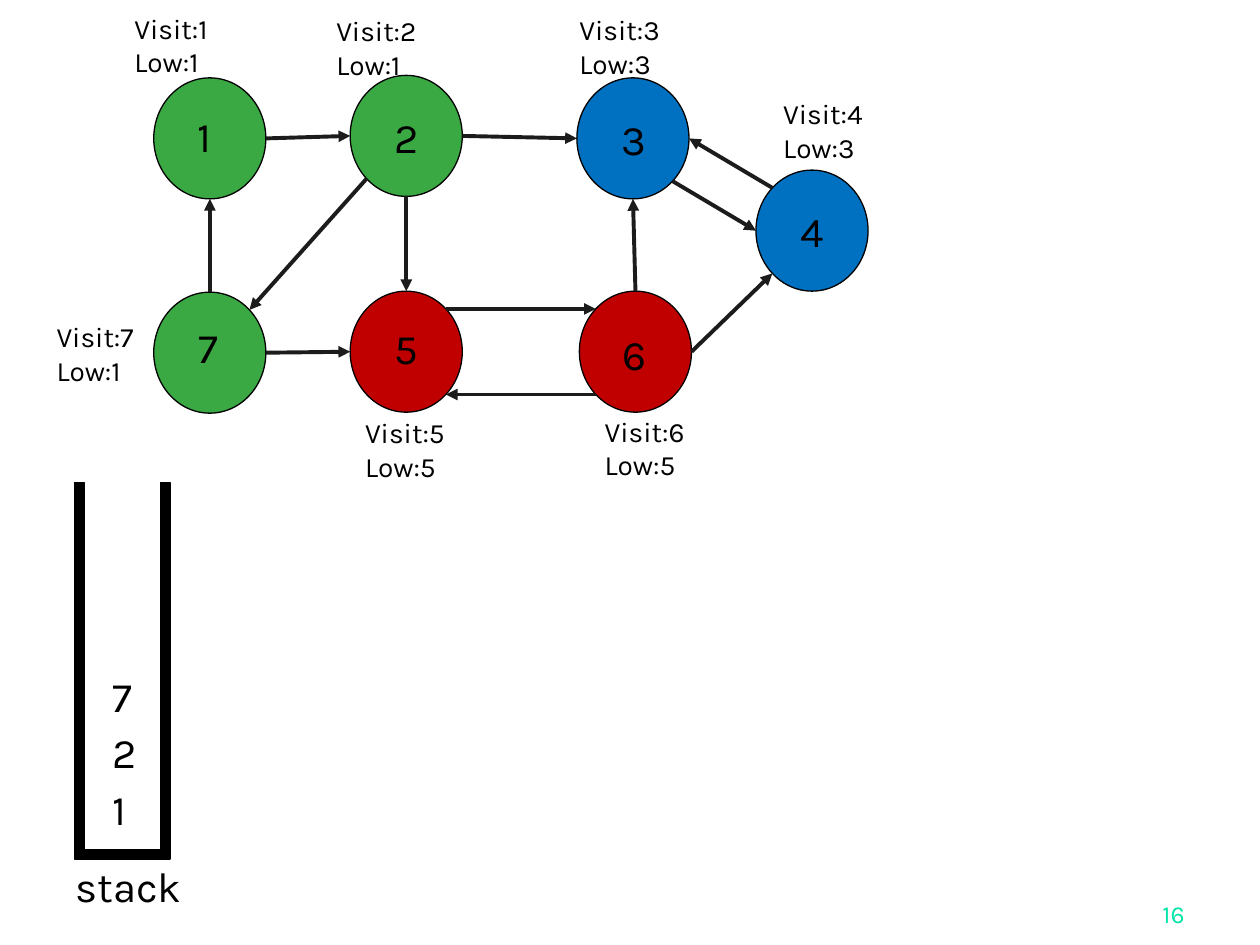
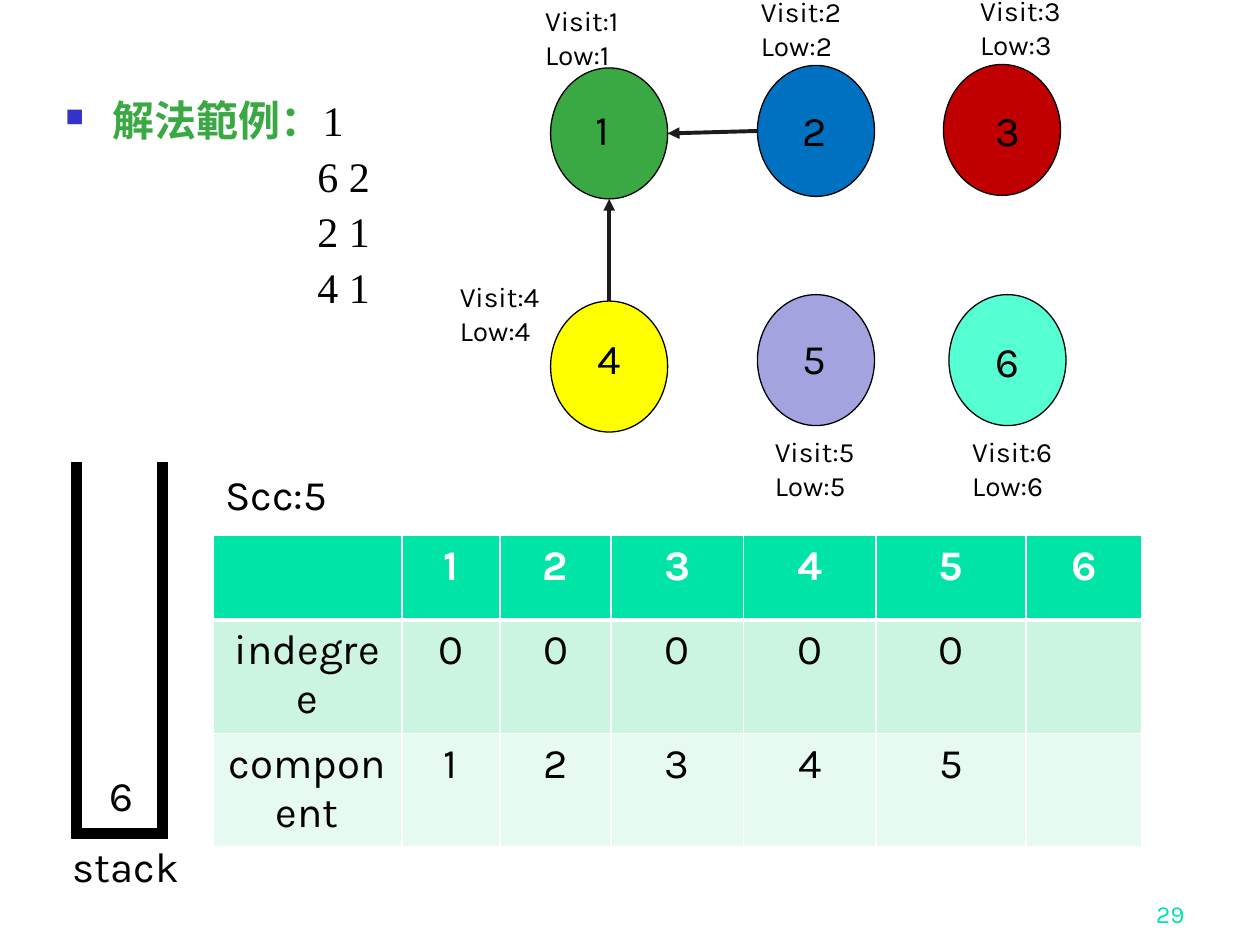
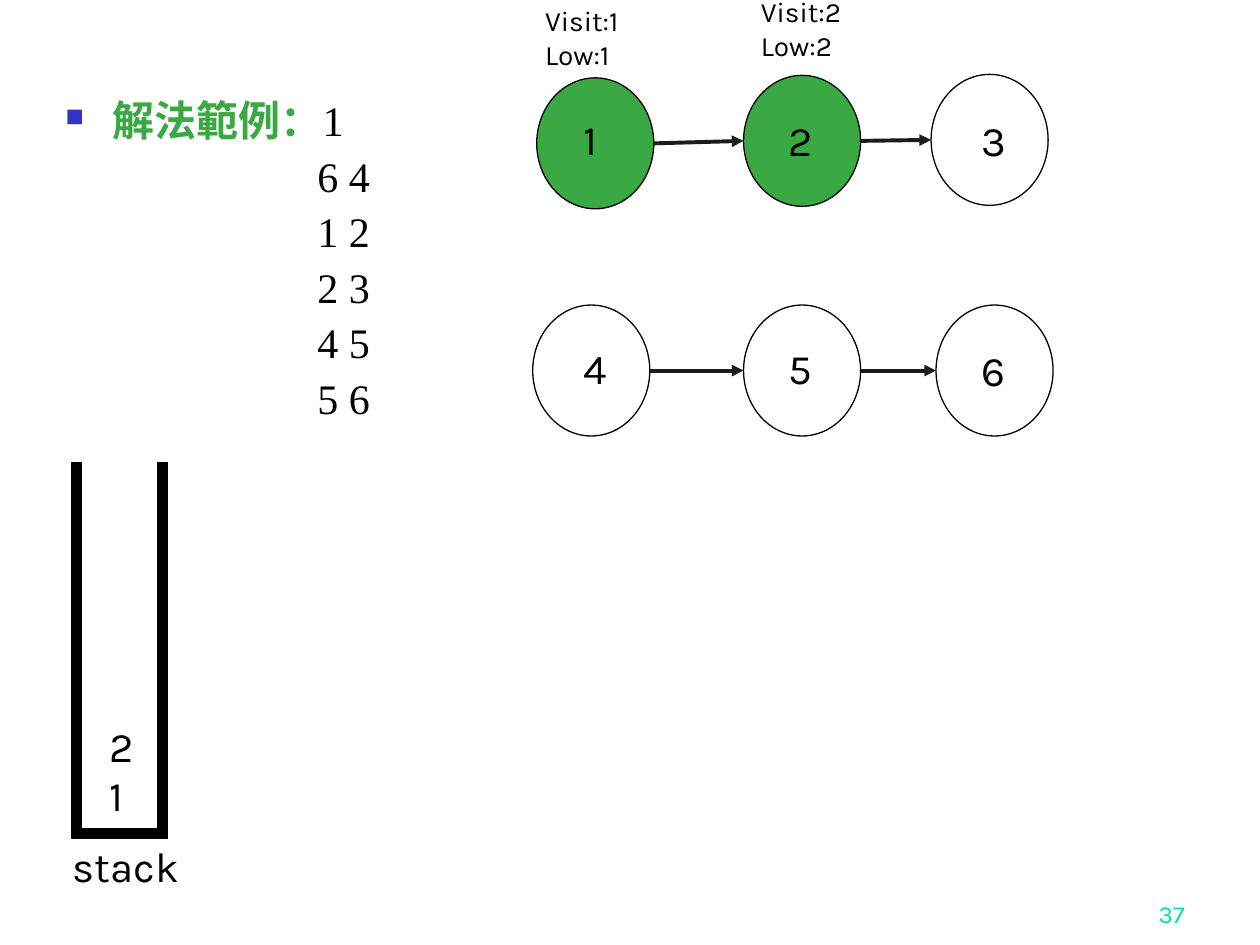
from lxml import etree
from pptx import Presentation
from pptx.dml.color import RGBColor
from pptx.enum.shapes import MSO_CONNECTOR as LINK, MSO_SHAPE as SHAPE
from pptx.enum.text import MSO_ANCHOR as ANCHOR, PP_ALIGN as ALIGN
from pptx.oxml.ns import qn
from pptx.util import Cm, Pt

BLACK, WHITE, ARROW = "000000", "FFFFFF", "1C1C1C"
GREEN, BLUE, RED = "3BA943", "0070C0", "C00000"
YELLOW, LILAC, MINT = "FFFF00", "A3A3E0", "56FFD2"
ACCENT, BULLET = "00E4A8", "3333CC"
ROW_FILLS = [ACCENT, "CCF5E1", "E7FAF1"]
SANS, SERIF = "Karla", "Times New Roman"

# Content; all places in cm.
# nodes: number -> (place, colour, place of the digit)
# marks: number -> (place, visit, low)
# edges: (from node, side, to node, side), sides as compass points
# stack: (place, items from the bottom up, top of the lowest item, step)
SLIDES = [
    {
        "page": 16,
        "node_size": (2.26, 2.44),
        "nodes": {
            3: ((11.63, 1.57), BLUE, (12.27, 2.16)),
            6: ((11.68, 5.87), RED, (12.29, 6.5)),
            4: ((15.24, 3.43), BLUE, (15.88, 4.01)),
            5: ((7.06, 5.87), RED, (7.7, 6.38)),
            7: ((3.1, 5.89), GREEN, (3.76, 6.35)),
            2: ((7.06, 1.52), GREEN, (7.7, 2.13)),
            1: ((3.1, 1.57), GREEN, (3.73, 2.11)),
        },
        "marks": {
            1: ((2.46, 0.1), 1, 1),
            2: ((6.53, 0.15), 2, 1),
            3: ((11.43, 0.13), 3, 3),
            4: ((15.54, 1.83), 4, 3),
            5: ((7.11, 8.26), 5, 5),
            6: ((11.94, 8.23), 6, 5),
            7: ((0.89, 6.32), 7, 1),
        },
        "edges": [
            (1, "E", 2, "W"), (7, "N", 1, "S"), (2, "SW", 7, "NE"),
            (7, "E", 5, "W"), (2, "S", 5, "N"), (2, "E", 3, "W"),
            (5, "NE", 6, "NW"), (6, "SW", 5, "SE"), (6, "N", 3, "S"),
            (6, "E", 4, "SW"), (4, "NW", 3, "E"), (3, "SE", 4, "W"),
        ],
        "stack": ((1.5, 9.73), [1, 2, 7], 15.67, 1.14),
    },
    {
        "page": 29,
        "example": ["6 2", "2 1", "4 1"],
        "node_size": (2.36, 2.64),
        "nodes": {
            3: ((19.02, 1.3), RED, (19.81, 1.98)),
            6: ((19.13, 5.94), MINT, (19.81, 6.63)),
            5: ((15.27, 5.94), LILAC, (15.93, 6.58)),
            4: ((11.1, 6.07), YELLOW, (11.79, 6.58)),
            2: ((15.27, 1.32), BLUE, (15.93, 1.98)),
            1: ((11.1, 1.37), GREEN, (11.76, 1.96)),
        },
        "marks": {
            1: ((10.74, -0.05), 1, 1),
            2: ((15.09, -0.23), 2, 2),
            3: ((19.51, -0.25), 3, 3),
            4: ((9.02, 5.51), 4, 4),
            5: ((15.37, 8.64), 5, 5),
            6: ((19.35, 8.64), 6, 6),
        },
        "edges": [(2, "W", 1, "E"), (4, "N", 1, "S")],
        "stack": ((1.45, 9.32), [6], 15.39, 1),
        "components": [
            ["", "1", "2", "3", "4", "5", "6"],
            ["indegree", "0", "0", "0", "0", "0", ""],
            ["component", "1", "2", "3", "4", "5", ""],
        ],
    },
    {
        "page": 37,
        "example": ["6 4", "1 2", "2 3", "4 5", "5 6"],
        "node_size": (2.36, 2.64),
        "nodes": {
            3: ((18.77, 1.5), WHITE, (19.53, 2.18)),
            6: ((18.87, 6.15), WHITE, (19.53, 6.83)),
            5: ((14.99, 6.15), WHITE, (15.65, 6.78)),
            4: ((10.74, 6.15), WHITE, (11.51, 6.78)),
            2: ((14.99, 1.52), GREEN, (15.65, 2.18)),
            1: ((10.82, 1.57), GREEN, (11.51, 2.16)),
        },
        "marks": {1: ((10.74, -0.05), 1, 1), 2: ((15.09, -0.23), 2, 2)},
        "edges": [(1, "E", 2, "W"), (2, "E", 3, "W"), (4, "E", 5, "W"), (5, "E", 6, "W")],
        "stack": ((1.45, 9.32), [1, 2], 15.39, 1),
    },
]
COMPONENT_COLUMNS = [3.81, 1.98, 2.24, 2.67, 2.67, 3.02, 2.34]
COMPONENT_ROW = 1.7


def rgb(colour):
    return RGBColor.from_string(colour)


def add_run(paragraph, text, size=24, colour=BLACK, font=SANS, bold=False):
    run = paragraph.add_run()
    run.text = str(text)
    run.font.size = Pt(size)
    run.font.name = font
    run.font.bold = bold
    run.font.color.rgb = rgb(colour)


def add_frame(slide, place, size):
    frame = slide.shapes.add_textbox(*map(Cm, place + size)).text_frame
    frame.word_wrap = True
    return frame


def add_lines(slide, place, size, lines, points=24):
    frame = add_frame(slide, place, size)
    for number, line in enumerate(lines):
        paragraph = frame.add_paragraph() if number else frame.paragraphs[0]
        add_run(paragraph, line, points)


def add_solid(slide, kind, place, size, colour):
    solid = slide.shapes.add_shape(kind, *map(Cm, place + size))
    solid.shadow.inherit = False
    solid.fill.solid()
    solid.fill.fore_color.rgb = rgb(colour)
    solid.line.color.rgb = rgb(BLACK)
    solid.line.width = Pt(0.75)


def add_arrow(slide, start, end):
    arrow = slide.shapes.add_connector(LINK.STRAIGHT, *map(Cm, start + end))
    arrow.line.color.rgb = rgb(ARROW)
    arrow.line.width = Pt(2.25)
    outline = arrow.line._get_or_add_ln()
    etree.SubElement(outline, qn("a:tailEnd"), type="triangle")
    etree.SubElement(outline.getparent(), qn("a:effectLst"))


def rim_point(place, size, side):
    """Point on a node's rim in the given compass direction."""
    across = ("E" in side) - ("W" in side)
    down = ("S" in side) - ("N" in side)
    reach = 0.5 / (across ** 2 + down ** 2) ** 0.5
    return (place[0] + size[0] * (0.5 + across * reach),
            place[1] + size[1] * (0.5 + down * reach))


def draw_graph(slide, nodes, size, edges, marks):
    for place, colour, _ in nodes.values():
        add_solid(slide, SHAPE.OVAL, place, size, colour)
    for tail, tail_side, head, head_side in edges:
        add_arrow(slide, rim_point(nodes[tail][0], size, tail_side),
                  rim_point(nodes[head][0], size, head_side))
    digit_size = (size[0] * 0.63, size[1] * 0.525)
    for number, (_, _, digit_place) in nodes.items():
        add_lines(slide, digit_place, digit_size, [number])
    for place, visit, low in marks.values():
        add_lines(slide, place, (2.26, 1.63), [f"Visit:{visit}", f"Low:{low}"], 16)


def draw_stack(slide, place, items, lowest, step):
    left, top = place
    for wall_left in (left, left + 1.73):
        add_solid(slide, SHAPE.RECTANGLE, (wall_left, top), (0.2, 7.59), BLACK)
    add_solid(slide, SHAPE.RECTANGLE, (left + 0.13, top + 7.39), (1.78, 0.2), BLACK)
    add_lines(slide, (left - 0.23, top + 7.49), (3.25, 1.27), ["stack"])
    for level, item in enumerate(items):
        add_lines(slide, (left + 0.51, lowest - level * step), (1.42, 1.27), [item])


def draw_example(slide, pairs):
    frame = add_frame(slide, (1.07, 1.9), (22.43, 1.2 * len(pairs) + 1))
    heading = frame.paragraphs[0]
    add_run(heading, "解法範例：", colour=GREEN, font=SERIF, bold=True)
    add_run(heading, "1", font=SERIF)
    for pair in pairs:
        add_run(frame.add_paragraph(), pair, font=SERIF)
    for paragraph in frame.paragraphs:
        paragraph.line_spacing = 0.9
        paragraph.space_before = Pt(5.8)
        paragraph._p.get_or_add_pPr().set("marL", str(Cm(5.08)))
    # Square bullet with a hanging indent
    props = heading._p.get_or_add_pPr()
    props.set("marL", str(Cm(0.95)))
    props.set("indent", str(-Cm(0.95)))
    bullet_colour = etree.SubElement(props, qn("a:buClr"))
    etree.SubElement(bullet_colour, qn("a:srgbClr"), val=BULLET)
    etree.SubElement(props, qn("a:buSzPct"), val="60000")
    etree.SubElement(props, qn("a:buChar"), char="■")


def set_borders(cell, widths):
    props = cell._tc.get_or_add_tcPr()
    for position, (side, width) in enumerate(widths.items()):
        border = etree.Element(qn(f"a:ln{side}"), w=str(Pt(width)))
        fill = etree.SubElement(border, qn("a:solidFill"))
        etree.SubElement(fill, qn("a:srgbClr"), val=WHITE)
        props.insert(position, border)


def draw_components(slide, rows):
    add_lines(slide, (4.29, 9.32), (3.25, 1.27), ["Scc:5"])
    size = (sum(COMPONENT_COLUMNS), COMPONENT_ROW * len(rows))
    table = slide.shapes.add_table(
        len(rows), len(COMPONENT_COLUMNS), *map(Cm, (4.29, 10.8) + size)).table
    for column, width in zip(table.columns, COMPONENT_COLUMNS):
        column.width = Cm(width)
    for r, values in enumerate(rows):
        for c, value in enumerate(values):
            cell = table.cell(r, c)
            cell.fill.solid()
            cell.fill.fore_color.rgb = rgb(ROW_FILLS[r])
            set_borders(cell, {"L": 1, "R": 1, "T": 3 if r == 1 else 1, "B": 3 if r == 0 else 1})
            paragraph = cell.text_frame.paragraphs[0]
            paragraph.alignment = ALIGN.CENTER
            if value:
                add_run(paragraph, value, colour=BLACK if r else WHITE, bold=r == 0)


def draw_page_number(slide, number):
    frame = add_frame(slide, (18.85, 17.58), (5.28, 1.27))
    frame.vertical_anchor = ANCHOR.BOTTOM
    frame.paragraphs[0].alignment = ALIGN.RIGHT
    add_run(frame.paragraphs[0], number, 14, ACCENT)


def main():
    deck = Presentation()
    deck.slide_width, deck.slide_height = Cm(25.4), Cm(19.05)
    for content in SLIDES:
        slide = deck.slides.add_slide(deck.slide_layouts[6])
        draw_page_number(slide, content["page"])
        if "example" in content:
            draw_example(slide, content["example"])
        draw_graph(slide, content["nodes"], content["node_size"],
                   content["edges"], content["marks"])
        draw_stack(slide, *content["stack"])
        if "components" in content:
            draw_components(slide, content["components"])
    deck.save("out.pptx")


if __name__ == "__main__":
    main()
